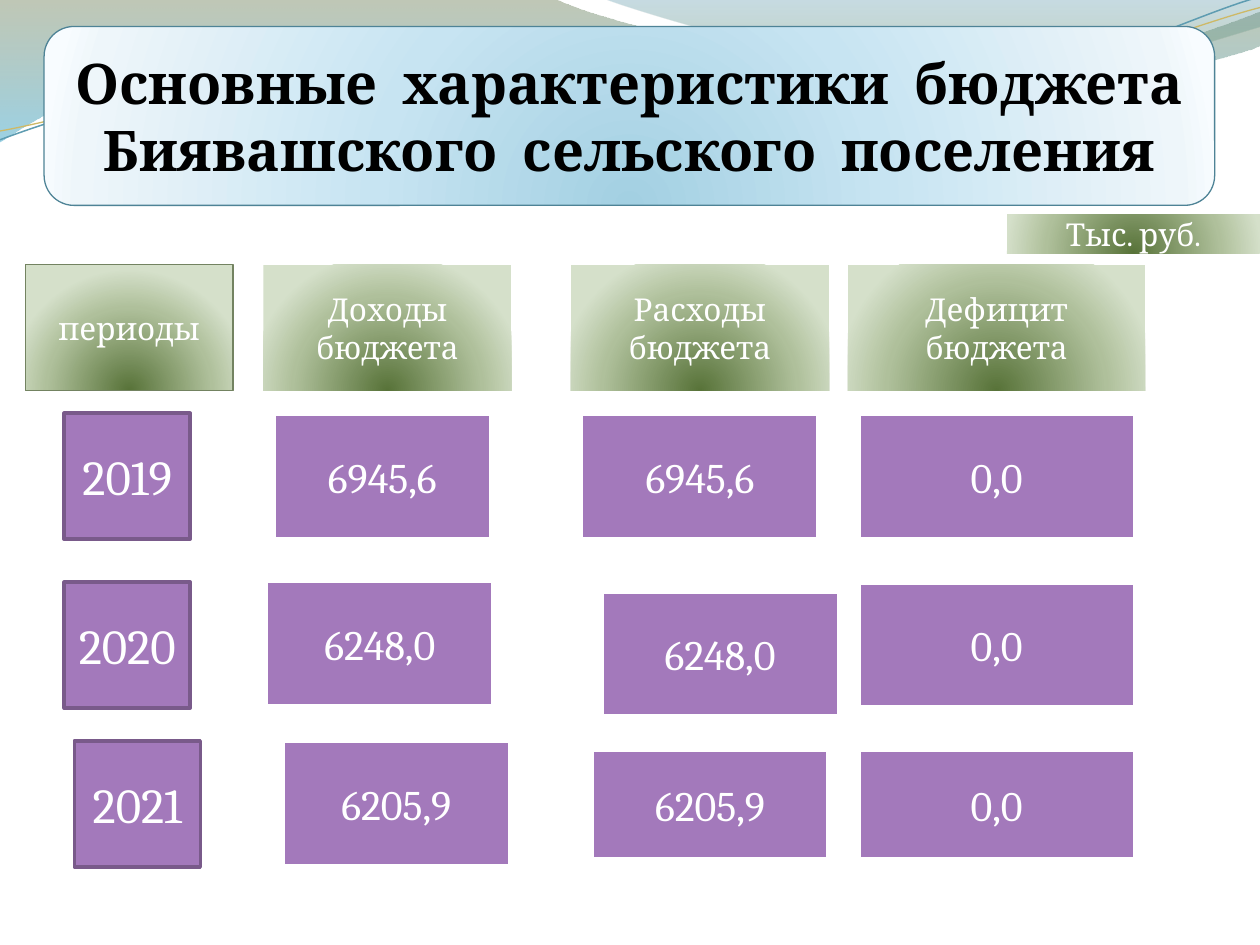
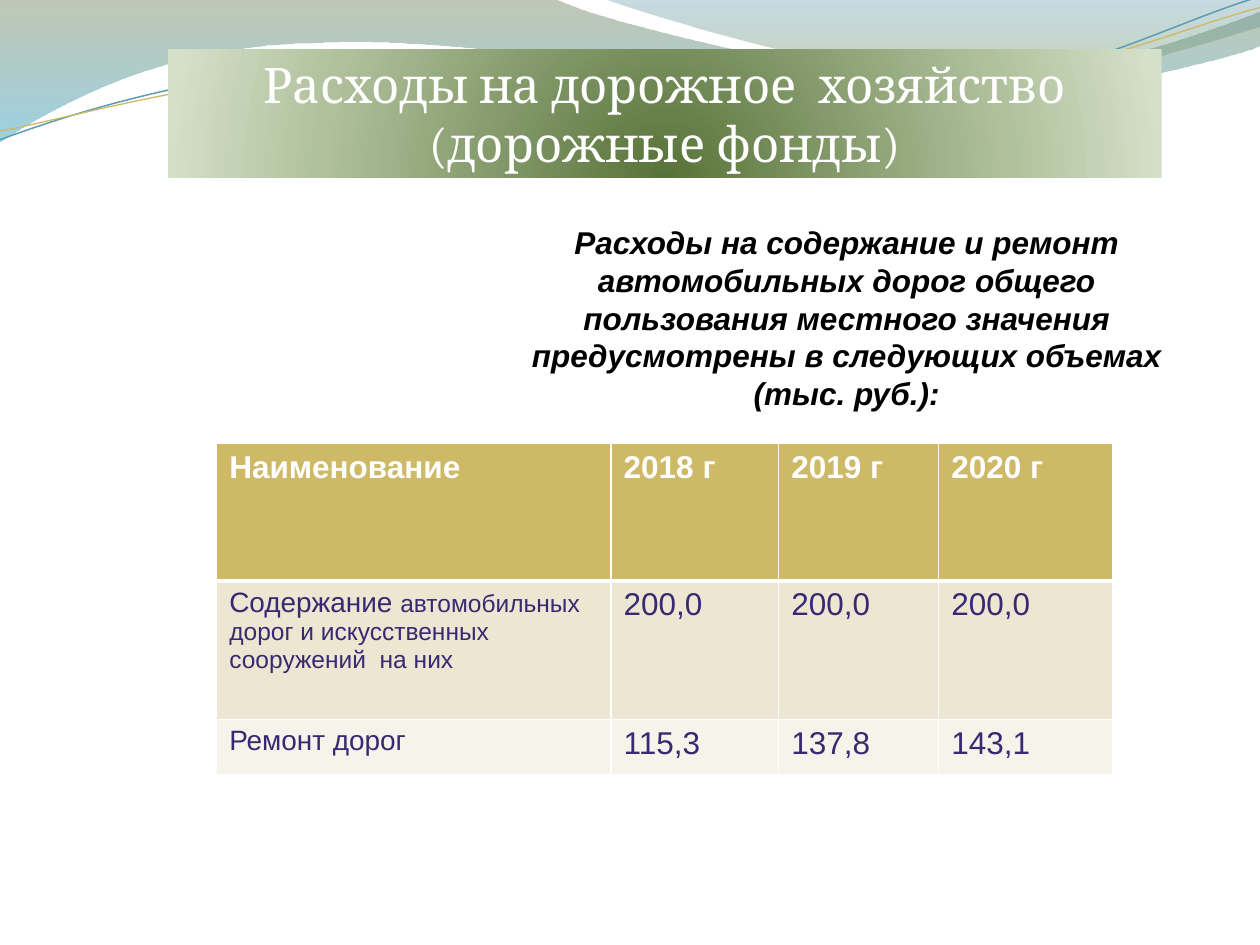
from dataclasses import dataclass

from lxml import etree
from pptx import Presentation
from pptx.dml.color import RGBColor
from pptx.enum.shapes import MSO_SHAPE, PP_PLACEHOLDER
from pptx.enum.text import MSO_ANCHOR, MSO_AUTO_SIZE, PP_ALIGN
from pptx.oxml.ns import qn
from pptx.util import Inches, Pt

RECTANGLE, ROUNDED = MSO_SHAPE.RECTANGLE, MSO_SHAPE.ROUNDED_RECTANGLE
MIDDLE, TOP = MSO_ANCHOR.MIDDLE, MSO_ANCHOR.TOP
CENTER, LEFT = PP_ALIGN.CENTER, PP_ALIGN.LEFT
NO_AUTOFIT = MSO_AUTO_SIZE.NONE
TITLE = PP_PLACEHOLDER.TITLE
GRID_COLUMNS, GRID_ROWS = 100, 75
UNIT = Inches(0.1)
TITLE_ONLY = 5


@dataclass(frozen=True)
class Theme:
    serif: str = "Cambria"
    sans: str = "Arial"
    white: str = "FFFFFF"
    black: str = "000000"
    purple: str = "A379BB"
    purple_edge: str = "795A8A"
    green_edge: str = "738361"
    blue_edge: str = "4E8396"
    wave_blue: str = "5E9CB1"
    gold: str = "CEB966"
    table_text: str = "382971"
    bands: tuple = ("CEB966", "EDE6D3", "F6F3EA")
    green_glow: tuple = ((0, "587339", 100), (68, "AFC09B", 100), (100, "D5E0CA", 100))
    blue_glow: tuple = ((0, "A3D0E2", 100), (43, "C7E4F2", 100),
                        (93, "EEF6FA", 100), (100, "F8FCFF", 100))
    wave_left: tuple = ((0, "74855E", 45), (100, "4AACCE", 55))
    wave_right: tuple = ((0, "45889F", 30), (80, "8AA36D", 45))
    banner_size: int = 32
    heading_size: int = 28
    value_size: int = 24
    body_size: int = 18
    cell_size: int = 16
    small_size: int = 14


THEME = Theme()


@dataclass(frozen=True)
class Box:
    left: float
    top: float
    width: float
    height: float

    def inner(self, left, top, width, height):
        return Box(self.left + left, self.top + top, width, height)

    def emu(self):
        return [round(side * UNIT) for side in (self.left, self.top, self.width, self.height)]


PAGE = Box(0, 0, GRID_COLUMNS, GRID_ROWS)


def set_values(target, values):
    for name, value in values.items():
        setattr(target, name, value)


def add_element(parent, tag, **attributes):
    return etree.SubElement(parent, qn(tag), {key: str(value) for key, value in attributes.items()})


def add_color(parent, color, opacity):
    element = add_element(parent, "a:srgbClr", val=color)
    if opacity < 100:
        add_element(element, "a:alpha", val=opacity * 1000)


def fill_gradient(shape, stops, radial=True):
    shape.fill.gradient()
    gradient = shape.element.spPr.find(qn("a:gradFill"))
    for child in list(gradient):
        gradient.remove(child)
    stop_list = add_element(gradient, "a:gsLst")
    for position, color, opacity in stops:
        add_color(add_element(stop_list, "a:gs", pos=position * 1000), color, opacity)
    if radial:
        circle = add_element(gradient, "a:path", path="circle")
        add_element(circle, "a:fillToRect", l=50000, t=130000, r=50000, b=-30000)
    else:
        add_element(gradient, "a:lin", ang=5400000, scaled=1)


def fill_solid(target, color):
    target.fill.solid()
    target.fill.fore_color.rgb = RGBColor.from_string(color)


def set_line(shape, color, width):
    if color is None:
        shape.line.fill.background()
        return
    shape.line.color.rgb = RGBColor.from_string(color)
    shape.line.width = Pt(width)


def write(frame, paragraphs, size, color, font=THEME.serif, bold=False, italic=False,
          align=CENTER, anchor=MIDDLE):
    set_values(frame, {"word_wrap": True, "vertical_anchor": anchor})
    for index, runs in enumerate(paragraphs):
        paragraph = frame.paragraphs[0] if index == 0 else frame.add_paragraph()
        paragraph.alignment = align
        for text, run_size in ([(runs, size)] if isinstance(runs, str) else runs):
            run = paragraph.add_run()
            run.text = text
            set_values(run.font, {"name": font, "size": Pt(run_size),
                                  "bold": bold, "italic": italic})
            run.font.color.rgb = RGBColor.from_string(color)


def add_plate(slide, box, fill, edge=None, edge_width=0.75, geometry=RECTANGLE):
    shape = slide.shapes.add_shape(geometry, *box.emu())
    shape.shadow.inherit = False
    if isinstance(fill, str):
        fill_solid(shape, fill)
    else:
        fill_gradient(shape, fill)
    set_line(shape, edge, edge_width)
    return shape


def add_panel(slide, box, text, size, fill, edge=None, edge_width=0.75):
    shape = add_plate(slide, box, fill, edge, edge_width)
    write(shape.text_frame, [text], size, THEME.white)


def format_title(slide, box, lines, **text_format):
    title = slide.shapes.title
    set_values(title, dict(zip(("left", "top", "width", "height"), box.emu())))
    title.text_frame.auto_size = NO_AUTOFIT
    write(title.text_frame, lines, **text_format)
    return title


def bend_segments(wave, segments):
    outline = next(wave.element.iter(qn("a:path")))
    lines = outline.findall(qn("a:lnTo"))
    position = 0
    for segment in segments:
        count = len(segment) // 2
        if count == 3:
            curve = etree.Element(qn("a:cubicBezTo"))
            lines[position].addprevious(curve)
            for line in lines[position:position + count]:
                curve.append(line[0])
                outline.remove(line)
        position += count


def add_wave(slide, start, segments, closed):
    points = [start]
    for segment in segments:
        points.extend(zip(segment[::2], segment[1::2]))
    points = [(Inches(x), Inches(y)) for x, y in points]
    builder = slide.shapes.build_freeform(*points[0])
    builder.add_line_segments(points[1:], close=closed)
    wave = builder.convert_to_shape()
    wave.shadow.inherit = False
    bend_segments(wave, segments)
    return wave


def add_layout_waves(layout, slide):
    bands = [
        (THEME.wave_left, (0, -0.01), [
            (4.4, -0.01), (4.76, 0.17, 6.64, 0.63, 7.58, 0.63), (8.53, 0.63, 9.58, 0.26, 10, 0.09),
            (10.01, 0.36), (9.83, 0.44, 8.7, 0.76, 7.46, 0.75), (6.22, 0.75, 3.82, 0.28, 2.57, 0.34),
            (1.29, 0.35, 0.46, 0.83, -0.01, 1.13)]),
        (THEME.wave_right, (4.79, -0.01), [
            (5.09, 0.11, 6.82, 0.62, 7.69, 0.65), (8.56, 0.69, 9.61, 0.32, 10, 0.21), (10, 0)]),
    ]
    strokes = [
        (THEME.wave_blue, 0.85, (0, 1.11), [
            (0.48, 0.93, 1.58, 0.57, 2.77, 0.52), (3.95, 0.47, 5.93, 0.89, 7.13, 0.8),
            (8.33, 0.71, 9.38, 0.15, 9.98, -0.02)]),
        (THEME.gold, 0.75, (0, 1.04), [
            (0.47, 0.96, 1.64, 0.61, 2.83, 0.56), (4.03, 0.51, 5.97, 0.83, 7.17, 0.75),
            (8.36, 0.67, 9.41, 0.21, 10, 0.06)]),
    ]
    waves = []
    for stops, start, segments in bands:
        wave = add_wave(slide, start, segments, True)
        fill_gradient(wave, stops, radial=False)
        set_line(wave, None, 0)
        waves.append(wave)
    for color, width, start, segments in strokes:
        wave = add_wave(slide, start, segments, False)
        wave.fill.background()
        set_line(wave, color, width)
        waves.append(wave)
    for number, wave in enumerate(waves, 20):
        wave.element.nvSpPr.cNvPr.set("id", str(number))
        layout.shapes.element.append(wave.element)


def keep_title_only(layout):
    for placeholder in list(layout.placeholders):
        if placeholder.placeholder_format.type != TITLE:
            layout.shapes.element.remove(placeholder.element)


def add_periods(slide, box):
    add_panel(slide, box.inner(0, 0, 16.5, 10), "периоды", THEME.body_size,
              THEME.green_glow, THEME.green_edge)
    for year, left, top in (("2019", 3.1, 11.8), ("2020", 3.1, 25.2), ("2021", 3.9, 37.8)):
        add_panel(slide, box.inner(left, top, 10, 10), year, THEME.heading_size,
                  THEME.purple, THEME.purple_edge, 2)


def add_budget_column(slide, box, heading, values):
    add_panel(slide, box.inner(0, 0, box.width, 10), heading, THEME.body_size, THEME.green_glow)
    for text, left, top, width, height in values:
        add_panel(slide, box.inner(left, top, width, height), text, THEME.value_size,
                  THEME.purple, THEME.white, 3)


def build_budget_slide(slide, page):
    banner = page.inner(3.5, 2.1, 92.9, 14.2)
    plate = add_plate(slide, banner, THEME.blue_glow, THEME.blue_edge, geometry=ROUNDED)
    title = format_title(slide, banner,
                         ["Основные  характеристики  бюджета",
                          "Биявашского  сельского  поселения"],
                         size=THEME.banner_size, color=THEME.black, bold=True)
    title.element.addprevious(plate.element)
    add_panel(slide, page.inner(79.9, 17, 20.1, 3.1), "Тыс. руб.", THEME.body_size,
              THEME.green_glow)
    add_periods(slide, page.inner(2, 21, 16.5, 48))
    columns = [
        ("Доходы бюджета", 20.9, 19.7, [("6945,6", 0.8, 11.8, 17.3, 10),
                                        ("6248,0", 0.2, 25.1, 18.1, 10),
                                        ("6205,9", 1.5, 37.8, 18.1, 10)]),
        ("Расходы бюджета", 45.3, 20.5, [("6945,6", 0.8, 11.8, 18.9, 10),
                                         ("6248,0", 2.4, 25.9, 18.9, 10),
                                         ("6205,9", 1.6, 38.5, 18.9, 8.7)]),
        ("Дефицит бюджета", 67.3, 23.6, [("0,0", 0.8, 11.8, 22, 10),
                                         ("0,0", 0.8, 25.2, 22, 10),
                                         ("0,0", 0.8, 38.5, 22, 8.7)]),
    ]
    for heading, left, width, values in columns:
        add_budget_column(slide, page.inner(left, 21, width, 48), heading, values)


def set_borders(cell, widths):
    properties = cell._tc.get_or_add_tcPr()
    for index, (tag, width) in enumerate(zip(("a:lnL", "a:lnR", "a:lnT", "a:lnB"), widths)):
        border = etree.Element(qn(tag), w=str(Pt(width)))
        add_color(add_element(border, "a:solidFill"), THEME.white, 100)
        properties.insert(index, border)


def add_road_table(slide, box):
    works = [("Содержание ", THEME.cell_size),
             ("автомобильных  дорог и искусственных сооружений  на них", THEME.small_size)]
    rows = [["Наименование", "2018 г", "2019 г", "2020 г"],
            [works, "200,0", "200,0", "200,0"],
            [[("Ремонт дорог", THEME.cell_size)], "115,3", "137,8", "143,1"]]
    table = slide.shapes.add_table(len(rows), len(rows[0]), *box.emu()).table
    set_values(table, {"first_row": False, "horz_banding": False})
    for column, width in zip(table.columns, (31.3, 13.3, 12.7, 13.8)):
        column.width = round(width * UNIT)
    for row, height in zip(table.rows, (10.9, 11, 4.4)):
        row.height = round(height * UNIT)
    for row_index, texts in enumerate(rows):
        header = row_index == 0
        for column_index, text in enumerate(texts):
            cell = table.cell(row_index, column_index)
            fill_solid(cell, THEME.bands[row_index])
            set_borders(cell, (1, 1, 3 if row_index == 1 else 1, 3 if header else 1))
            write(cell.text_frame, [text], THEME.body_size,
                  THEME.white if header else THEME.table_text, THEME.sans,
                  bold=header, align=LEFT, anchor=TOP)


def build_road_slide(slide, page):
    title = format_title(slide, page.inner(13.3, 3.9, 78.9, 10.2),
                         ["Расходы на дорожное  хозяйство (дорожные фонды)"],
                         size=THEME.heading_size, color=THEME.white)
    fill_gradient(title, THEME.green_glow)
    note = slide.shapes.add_textbox(*page.inner(38.3, 17.2, 57.8, 16.2).emu())
    write(note.text_frame,
          ["Расходы на содержание и ремонт автомобильных дорог общего пользования "
           "местного значения предусмотрены в следующих объемах (тыс. руб.):"],
          THEME.body_size, THEME.black, THEME.sans, bold=True, italic=True, anchor=TOP)
    add_road_table(slide, page.inner(17.2, 35.2, 71.1, 26.3))


def main():
    presentation = Presentation()
    set_values(presentation, {"slide_width": GRID_COLUMNS * UNIT,
                              "slide_height": GRID_ROWS * UNIT})
    layout = presentation.slide_layouts[TITLE_ONLY]
    keep_title_only(layout)
    builders = (build_budget_slide, build_road_slide)
    slides = [presentation.slides.add_slide(layout) for _ in builders]
    add_layout_waves(layout, slides[0])
    for slide, build in zip(slides, builders):
        build(slide, PAGE)
    presentation.save("out.pptx")


if __name__ == "__main__":
    main()
